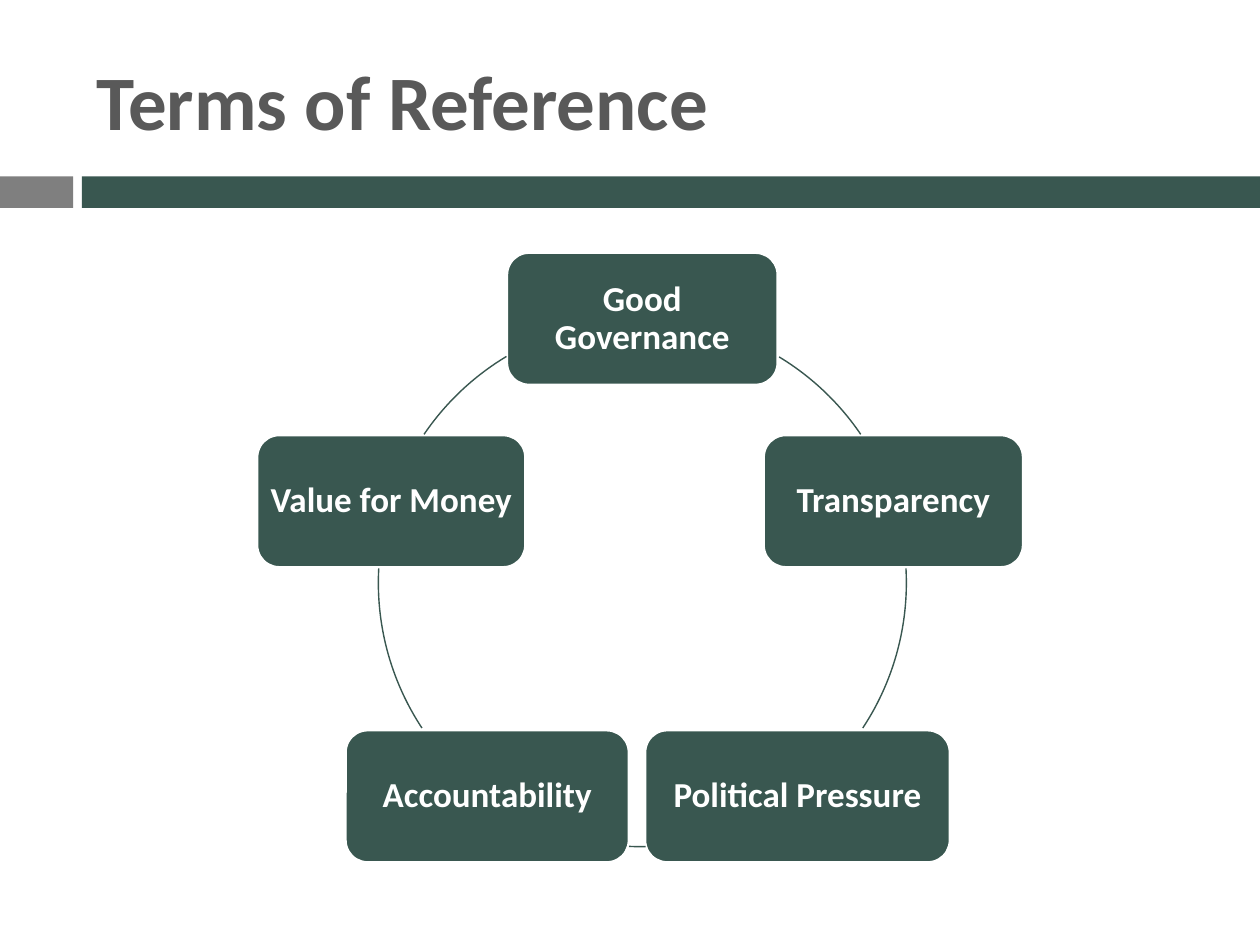
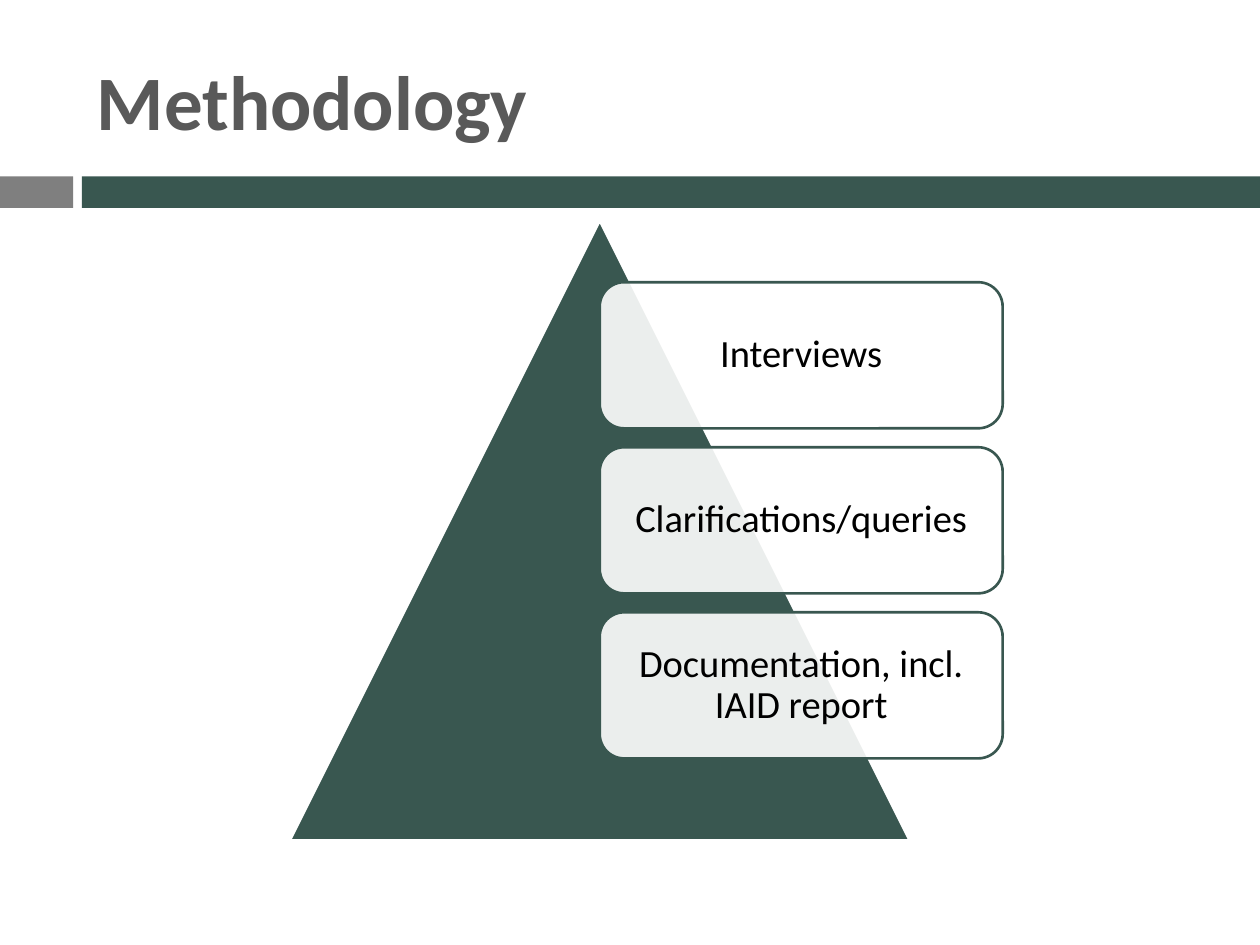
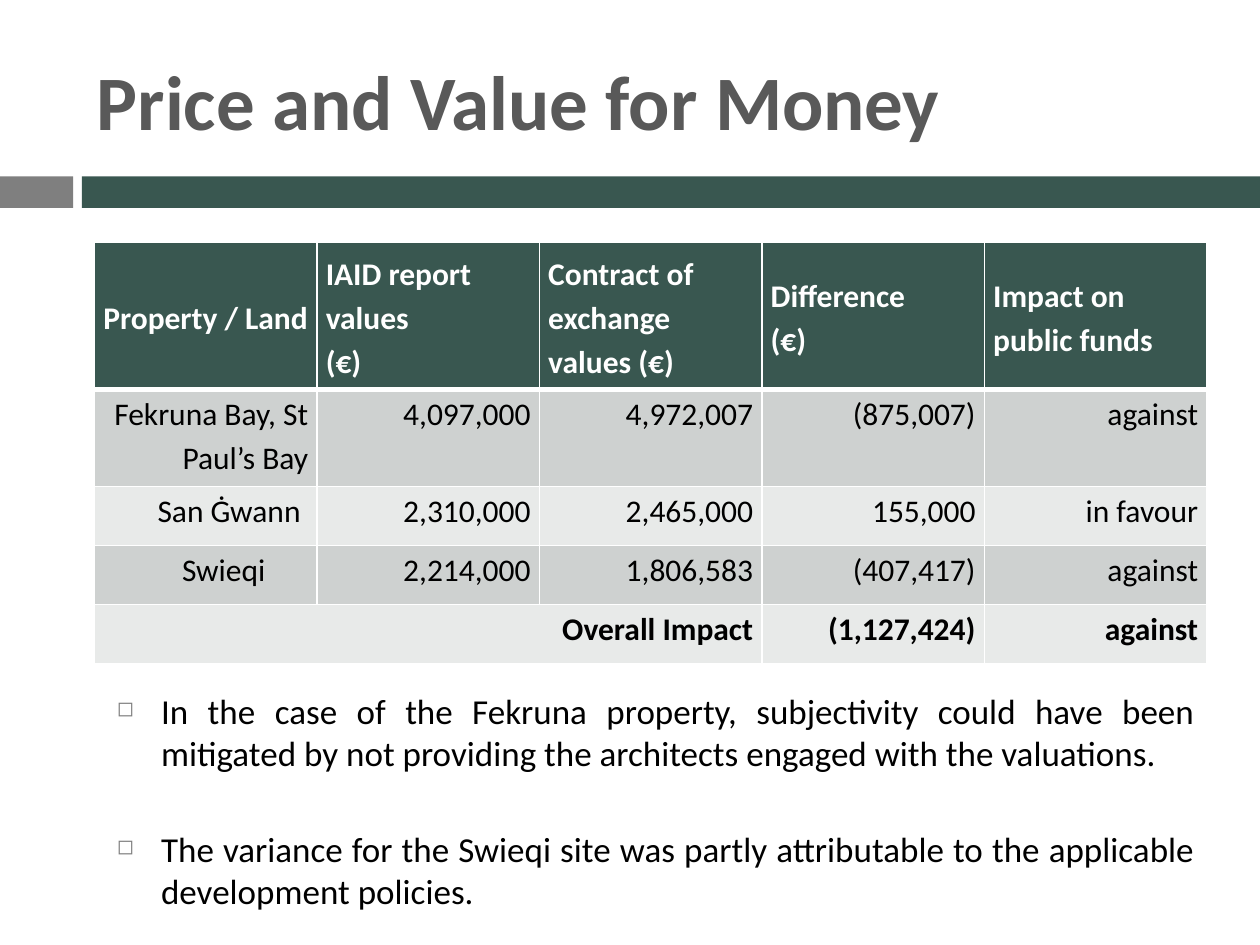
from dataclasses import dataclass
from math import cos, radians, sin

from lxml import etree
from pptx import Presentation, util as u
from pptx.dml.color import RGBColor
from pptx.enum import shapes, text
from pptx.oxml import ns


@dataclass(frozen=True)
class Theme:
    font: str = "Calibri"
    green: str = "395750"
    grey: str = "7F7F7F"
    title_grey: str = "595959"
    white: str = "FFFFFF"
    black: str = "000000"
    band_dark: str = "CED1D0"
    band_light: str = "E8EAE9"
    title_size: int = 44
    card_size: int = 22
    body_size: int = 20
    table_size: int = 18


THEME = Theme()
COLUMNS, ROWS = 100, 75
CELL = u.Inches(0.1)
SHAPE = shapes.MSO_SHAPE
ALIGN = text.PP_ALIGN
MIDDLE = text.MSO_ANCHOR.MIDDLE


# Grid, text and shape helpers
def place(*cells):
    """Turn columns and rows of the slide grid into lengths."""
    return [round(cell * CELL) for cell in cells]


def rgb(color):
    return RGBColor.from_string(color)


def write(frame, content, size=THEME.body_size, color=THEME.black, bold=False,
          align=ALIGN.LEFT, spacing=1.0, anchor=None):
    """Write one paragraph per line of content and return the paragraphs."""
    frame.word_wrap = True
    if anchor is not None:
        frame.vertical_anchor = anchor
    frame.text = content
    for paragraph in frame.paragraphs:
        paragraph.alignment = align
        paragraph.line_spacing = spacing
        for run in paragraph.runs:
            font = run.font
            font.name, font.size, font.bold = THEME.font, u.Pt(size), bold
            font.color.rgb = rgb(color)
    return frame.paragraphs


def add_figure(slide, kind, area, fill=None, line=None, width=1.5, opacity=100):
    figure = slide.shapes.add_shape(kind, *place(*area))
    figure.shadow.inherit = False
    if fill:
        figure.fill.solid()
        figure.fill.fore_color.rgb = rgb(fill)
        if opacity < 100:
            tint = figure.element.spPr.find(ns.qn("a:solidFill"))[0]
            etree.SubElement(tint, ns.qn("a:alpha"), val=str(opacity * 1000))
    else:
        figure.fill.background()
    if line:
        figure.line.color.rgb = rgb(line)
        figure.line.width = u.Pt(width)
    else:
        figure.line.fill.background()
    return figure


def add_card(slide, label, area, fill, line, opacity=100, **style):
    card = add_figure(slide, SHAPE.ROUNDED_RECTANGLE, area, fill, line, opacity=opacity)
    frame = card.text_frame
    frame.margin_left = frame.margin_right = u.Inches(0.03)
    frame.margin_top = frame.margin_bottom = u.Inches(0.03)
    write(frame, label, align=ALIGN.CENTER, spacing=0.9, anchor=MIDDLE, **style)


def start_slide(deck, title):
    """Add a slide with the shared title and two-part band."""
    slide = deck.slides.add_slide(deck.slide_layouts[6])
    band_top, band_height, band_left = 14, 2.5, 6.5
    add_figure(slide, SHAPE.RECTANGLE, (0, band_top, 5.8, band_height), THEME.grey)
    add_figure(slide, SHAPE.RECTANGLE,
               (band_left, band_top, COLUMNS - band_left, band_height), THEME.green)
    heading = slide.shapes.add_textbox(*place(6.7, 2.5, 89.2, 10.8))
    write(heading.text_frame, title, THEME.title_size, THEME.title_grey, True, anchor=MIDDLE)
    return slide


# Terms of reference: a ring of five cards
def add_cycle(slide, center, radius, card_height, principles, arcs):
    center_x, center_y = center
    ring = (center_x - radius, center_y - radius, 2 * radius, 2 * radius)
    step = 360 / len(principles)
    for index, (principle, width) in enumerate(principles):
        angle = radians(index * step - 90)
        left = center_x + radius * cos(angle) - width / 2
        top = center_y + radius * sin(angle) - card_height / 2
        add_card(slide, principle, (left, top, width, card_height), THEME.green,
                 THEME.white, color=THEME.white, bold=True)
    for ends in arcs:
        arc = add_figure(slide, SHAPE.ARC, ring, line=THEME.green, width=0.79)
        for index, degrees in enumerate(ends):
            arc.adjustments[index] = degrees % 360 * 0.6


# Methodology: a pyramid with stacked cards
def add_pyramid(slide, area, sources):
    add_figure(slide, SHAPE.ISOSCELES_TRIANGLE, area, THEME.green, THEME.white)
    left, top, width, _ = area
    card_height, pitch = 11.6, 13.1
    for index, source in enumerate(sources):
        card = (left + width / 2, top + 4.9 + index * pitch, width * 0.65, card_height)
        add_card(slide, source, card, THEME.white, THEME.green, 90, size=THEME.card_size)


# Price and value for money: a table and bullets
def set_borders(cell, bottom):
    properties = cell._tc.get_or_add_tcPr()
    for index, (side, width) in enumerate((("L", 1), ("R", 1), ("T", 1), ("B", bottom))):
        border = etree.Element(ns.qn(f"a:ln{side}"), w=str(u.Pt(width)))
        fill = etree.SubElement(border, ns.qn("a:solidFill"))
        etree.SubElement(fill, ns.qn("a:srgbClr"), val=THEME.white)
        properties.insert(index, border)


def add_price_table(slide, area, heights, rows, name_indents):
    table = slide.shapes.add_table(len(rows), len(rows[0]), *place(*area)).table
    for column in table.columns:
        column.width = round(area[2] * CELL / len(rows[0]))
    last = len(rows) - 1
    for r, values in enumerate(rows):
        table.rows[r].height = round(heights[r] * CELL)
        header = r == 0
        band = THEME.green if header else THEME.band_dark if r % 2 else THEME.band_light
        for c, value in enumerate(values):
            cell = table.cell(r, c)
            cell.margin_left = cell.margin_right = u.Inches(0.07)
            cell.margin_top = cell.margin_bottom = 0
            if c == 0 and value in name_indents:
                cell.margin_right = u.Inches(name_indents[value])
            cell.fill.solid()
            cell.fill.fore_color.rgb = rgb(band)
            set_borders(cell, 3 if header else 1)
            if header:
                cell.vertical_anchor = MIDDLE
            if value:
                write(cell.text_frame, value, THEME.table_size,
                      THEME.white if header else THEME.black, header or r == last,
                      ALIGN.LEFT if header else ALIGN.RIGHT, 1.15)
    table.cell(last, 0).merge(table.cell(last, 2))


def add_bullets(slide, area, findings):
    frame = slide.shapes.add_textbox(*place(*area)).text_frame
    for index, paragraph in enumerate(write(frame, "\n".join(findings), align=ALIGN.JUSTIFY)):
        paragraph.space_before = u.Pt(31 if index else 7)
        properties = paragraph._p.get_or_add_pPr()
        indent = u.Inches(0.35)
        properties.set("marL", str(indent))
        properties.set("indent", str(-indent))
        tint = etree.SubElement(properties, ns.qn("a:buClr"))
        etree.SubElement(tint, ns.qn("a:srgbClr"), val=THEME.grey)
        etree.SubElement(properties, ns.qn("a:buSzPct"), val="60000")
        etree.SubElement(properties, ns.qn("a:buChar"), char="◻")


def main():
    deck = Presentation()
    deck.slide_width, deck.slide_height = COLUMNS * CELL, ROWS * CELL

    terms = start_slide(deck, "Terms of Reference")
    principles = [("Good Governance", 21.5), ("Transparency", 20.6),
                  ("Political Pressure", 24.2), ("Accountability", 22.5),
                  ("Value for Money", 21.3)]
    arcs = [(-58.8, -34.2), (-3.1, 33.4), (89.3, 92.9), (146.6, 183.1), (214.2, 239)]
    add_cycle(terms, (50.98, 46.25), 20.95, 10.5, principles, arcs)

    methodology = start_slide(deck, "Methodology")
    add_pyramid(methodology, (23, 17.5, 49.2, 49.2),
                ["Interviews", "Clarifications/queries", "Documentation, incl. IAID report"])

    price = start_slide(deck, "Price and Value for Money")
    rows = [
        ("Property / Land", "IAID report values\n(€)", "Contract of exchange values (€)",
         "Difference\n(€)", "Impact on\npublic funds"),
        ("Fekruna Bay, St Paul’s Bay", "4,097,000", "4,972,007", "(875,007)", "against"),
        ("San Ġwann", "2,310,000", "2,465,000", "155,000", "in favour"),
        ("Swieqi", "2,214,000", "1,806,583", "(407,417)", "against"),
        ("Overall Impact", "", "", "(1,127,424)", "against"),
    ]
    add_price_table(price, (7.5, 19.2, 88.3, 33.3), (11.7, 7.7, 4.7, 4.7, 4.7), rows,
                    {"San Ġwann": 0.13, "Swieqi": 0.41})
    add_bullets(price, (8.3, 54.2, 87.5, 18.8), [
        "In the case of the Fekruna property, subjectivity could have been mitigated "
        "by not providing the architects engaged with the valuations.",
        "The variance for the Swieqi site was partly attributable to the applicable "
        "development policies.",
    ])
    deck.save("out.pptx")


if __name__ == "__main__":
    main()
